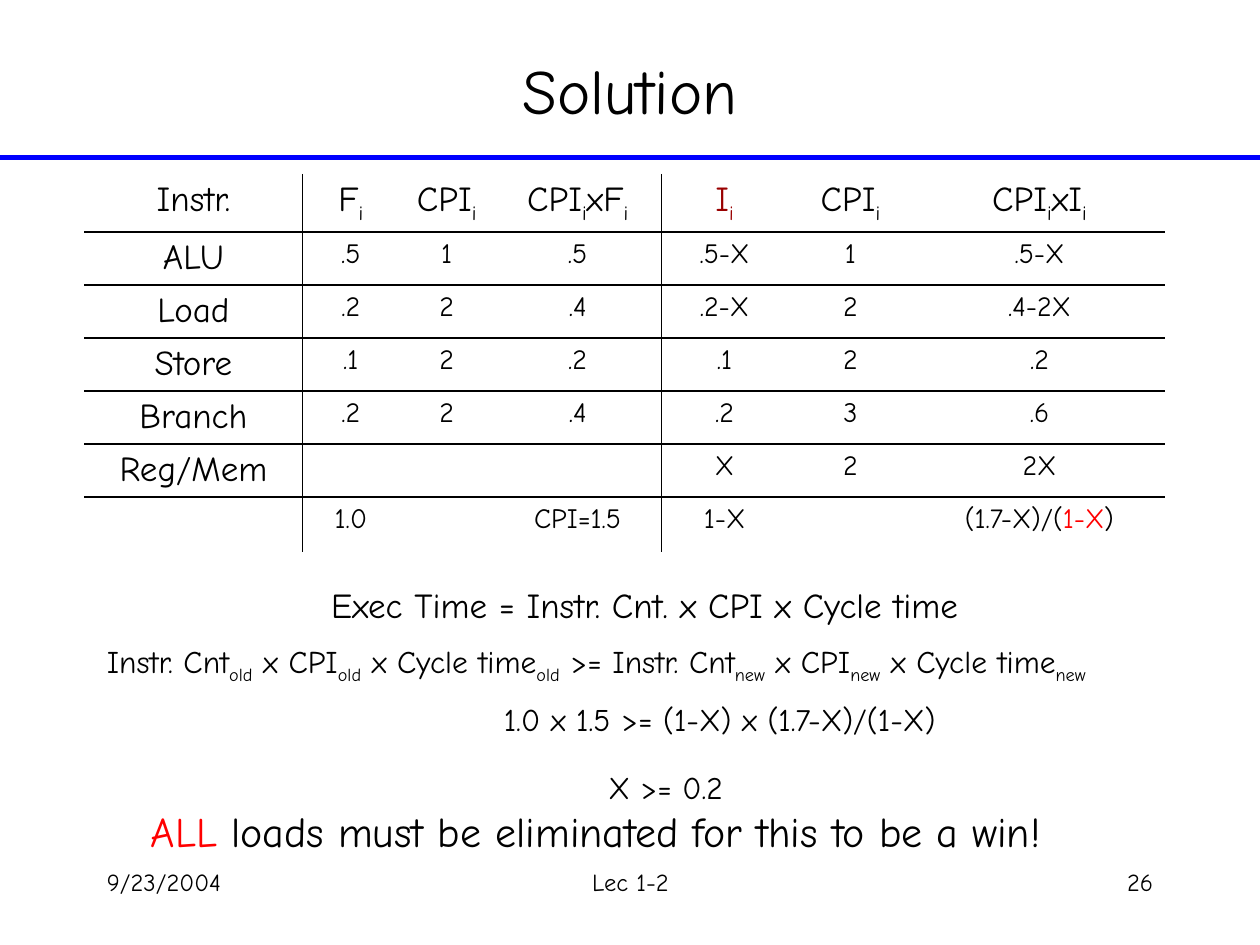
from dataclasses import dataclass
from typing import NamedTuple

from lxml import etree
from pptx import Presentation
from pptx.dml.color import RGBColor
from pptx.enum.shapes import MSO_CONNECTOR
from pptx.enum.text import MSO_ANCHOR, MSO_AUTO_SIZE, PP_ALIGN
from pptx.oxml.ns import qn
from pptx.util import Inches, Pt

LEFT, CENTER, RIGHT = PP_ALIGN.LEFT, PP_ALIGN.CENTER, PP_ALIGN.RIGHT
TOP, MIDDLE = MSO_ANCHOR.TOP, MSO_ANCHOR.MIDDLE
FIT_SHAPE = MSO_AUTO_SIZE.SHAPE_TO_FIT_TEXT
STRAIGHT = MSO_CONNECTOR.STRAIGHT


@dataclass(frozen=True)
class Theme:
    font: str = "Comic Neue"
    ink: str = "000000"
    rule: str = "0000FF"
    accent: str = "FF0000"
    dark_red: str = "990000"
    title: int = 36
    conclusion: int = 24
    heading: int = 20
    formula: int = 18
    value: int = 16
    footer: int = 14


THEME = Theme()


class Run(NamedTuple):
    text: str
    sub: bool = False
    color: str = ""


class Label(NamedTuple):
    runs: list[Run]
    left: float
    top: float
    width: float
    height: float
    size: int
    align: PP_ALIGN = LEFT
    anchor: MSO_ANCHOR = TOP
    wrap: bool = False


def plain(text: str) -> list[Run]:
    return [Run(text)] if text else []


def subbed(*parts: str, color: str = "") -> list[Run]:
    """Alternate baseline and subscript parts."""
    return [Run(part, i % 2 == 1, color) for i, part in enumerate(parts)]


# Table content
HEADER = [plain("Instr."), subbed("F", "i"), subbed("CPI", "i"),
          subbed("CPI", "i", "xF", "i"), subbed("I", "i", color=THEME.dark_red),
          subbed("CPI", "i"), subbed("CPI", "i", "xI", "i")]
BODY = [
    ["ALU", ".5", "1", ".5", ".5-X", "1", ".5-X"],
    ["Load", ".2", "2", ".4", ".2-X", "2", ".4-2X"],
    ["Store", ".1", "2", ".2", ".1", "2", ".2"],
    ["Branch", ".2", "2", ".4", ".2", "3", ".6"],
    ["Reg/Mem", "", "", "", "X", "2", "2X"],
]
TOTALS = [*map(plain, ["", "1.0", "", "CPI=1.5", "1-X", ""]),
          [Run("(1.7-X)/("), Run("1-X", color=THEME.accent), Run(")")]]
ROWS = [HEADER, *([plain(text) for text in row] for row in BODY), TOTALS]
COL_WIDTHS = [1.73, 0.77, 0.75, 1.33, 1, 1, 2]
ROW_HEIGHTS = [0.38] * 6 + [0.44]
RULED_COLS = (0, 3)  # columns with a vertical rule on their right

# Text outside the table
LABELS = [
    Label(plain("9/23/2004"), 0.75, 6.83, 2.08, 0.5, THEME.footer, wrap=True),
    Label(plain("Lec 1-2"), 3.42, 6.83, 3.17, 0.5, THEME.footer, CENTER, wrap=True),
    Label(plain("26"), 7.17, 6.83, 2.08, 0.5, THEME.footer, RIGHT, wrap=True),
    Label(plain("Solution"), 0.75, 0.17, 8.5, 1.08, THEME.title, CENTER, MIDDLE, True),
    Label(plain("Exec Time = Instr. Cnt. x CPI x Cycle time"),
          2.53, 4.58, 5.69, 0.43, THEME.heading),
    Label(subbed("Instr. Cnt", "old", " x CPI", "old", " x Cycle time", "old",
                 " >= Instr. Cnt", "new", " x CPI", "new", " x Cycle time", "new"),
          0.75, 5.05, 8.91, 0.4, THEME.formula),
    Label(plain("1.0 x 1.5 >= (1-X) x (1.7-X)/(1-X)"),
          3.9, 5.51, 3.91, 0.4, THEME.formula),
    Label(plain("X >= 0.2"), 4.73, 6.05, 1.12, 0.4, THEME.formula),
    Label([Run("ALL", color=THEME.accent),
           Run(" loads must be eliminated for this to be a win!")],
          1.1, 6.34, 7.9, 0.5, THEME.conclusion),
]


def write(p, runs: list[Run], size: int, align: PP_ALIGN) -> None:
    p.alignment = align
    p.font.name = THEME.font
    p.font.size = Pt(size)
    p.font.color.rgb = RGBColor.from_string(THEME.ink)
    for run in runs:
        r = p.add_run()
        r.text = run.text
        if run.color:
            r.font.color.rgb = RGBColor.from_string(run.color)
        if run.sub:
            r._r.get_or_add_rPr().set("baseline", "-25000")


def add_label(slide, label: Label) -> None:
    box = slide.shapes.add_textbox(Inches(label.left), Inches(label.top),
                                   Inches(label.width), Inches(label.height))
    tf = box.text_frame
    tf.word_wrap = label.wrap
    tf.vertical_anchor = label.anchor
    if not label.wrap:
        tf.auto_size = FIT_SHAPE
    write(tf.paragraphs[0], label.runs, label.size, label.align)


def add_rule(slide, y: float) -> None:
    line = slide.shapes.add_connector(STRAIGHT, 0, Inches(y), Inches(10), Inches(y))
    line.line.color.rgb = RGBColor.from_string(THEME.rule)
    line.line.width = Pt(3)
    etree.SubElement(line._element.spPr, qn("a:effectLst"))


def set_borders(cell, **edges: bool) -> None:
    """Rule or clear the cell's edges, given in the order L, R, T, B."""
    tc_pr = cell._tc.get_or_add_tcPr()
    for edge, ruled in edges.items():
        ln = etree.SubElement(tc_pr, qn(f"a:ln{edge}"), w=str(Pt(1)))
        if ruled:
            fill = etree.SubElement(ln, qn("a:solidFill"))
            etree.SubElement(fill, qn("a:srgbClr"), val=THEME.ink)
        else:
            etree.SubElement(ln, qn("a:noFill"))


def space_before(p, percent: int) -> None:
    spacing = etree.Element(qn("a:spcBef"))
    etree.SubElement(spacing, qn("a:spcPct"), val=str(percent * 1000))
    p._p.get_or_add_pPr().insert(0, spacing)


def add_cpi_table(slide, left: float, top: float) -> None:
    last = len(ROWS) - 1
    table = slide.shapes.add_table(
        len(ROWS), len(COL_WIDTHS), Inches(left), Inches(top),
        Inches(sum(COL_WIDTHS)), Inches(sum(ROW_HEIGHTS))).table
    table.first_row = table.horz_banding = False
    for column, width in zip(table.columns, COL_WIDTHS):
        column.width = Inches(width)
    for i, (row, height) in enumerate(zip(ROWS, ROW_HEIGHTS)):
        table.rows[i].height = Inches(height)
        for j, runs in enumerate(row):
            cell = table.cell(i, j)
            set_borders(cell, L=j - 1 in RULED_COLS, R=j in RULED_COLS,
                        T=i > 0, B=i < last)
            cell.fill.background()
            p = cell.text_frame.paragraphs[0]
            size = THEME.heading if i == 0 or (j == 0 and runs) else THEME.value
            write(p, runs, size, CENTER)
            space_before(p, 20)


def main() -> None:
    prs = Presentation()
    prs.slide_width, prs.slide_height = Inches(10), Inches(7.5)
    slide = prs.slides.add_slide(prs.slide_layouts[6])
    add_rule(slide, 1.25)
    add_cpi_table(slide, 0.67, 1.38)
    for label in LABELS:
        add_label(slide, label)
    prs.save("out.pptx")


if __name__ == "__main__":
    main()
